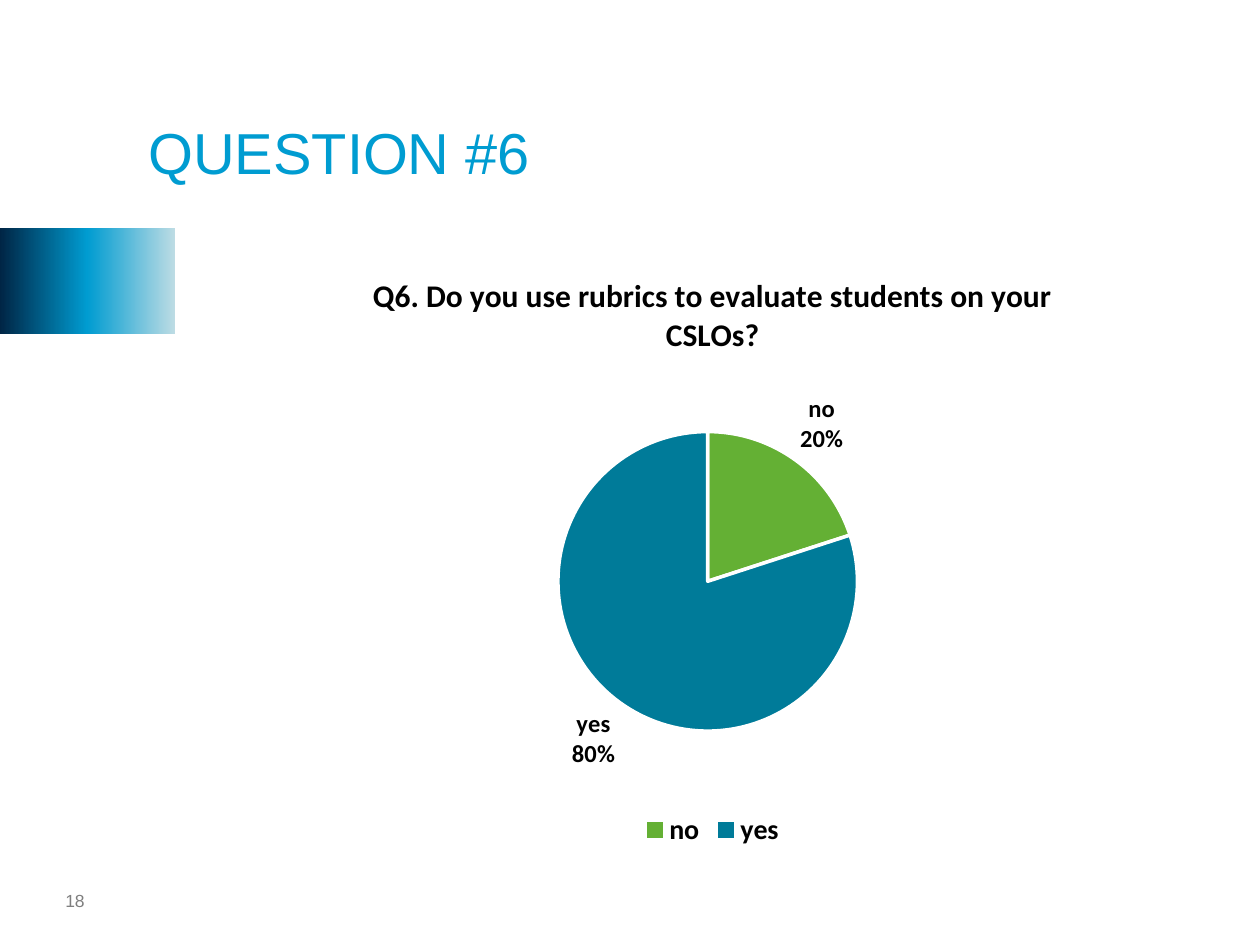
from lxml import etree
from pptx import Presentation
from pptx.chart.data import CategoryChartData
from pptx.dml.color import RGBColor
from pptx.enum.chart import XL_CHART_TYPE, XL_LABEL_POSITION, XL_LEGEND_POSITION
from pptx.enum.shapes import MSO_SHAPE
from pptx.enum.text import MSO_ANCHOR, PP_ALIGN
from pptx.oxml import parse_xml
from pptx.oxml.ns import nsdecls, qn
from pptx.util import Inches, Pt

PIE = XL_CHART_TYPE.PIE
OUTSIDE = XL_LABEL_POSITION.OUTSIDE_END
BOTTOM = XL_LEGEND_POSITION.BOTTOM
RECTANGLE = MSO_SHAPE.RECTANGLE
TOP, MIDDLE = MSO_ANCHOR.TOP, MSO_ANCHOR.MIDDLE
LEFT, CENTER = PP_ALIGN.LEFT, PP_ALIGN.CENTER

SLIDE_SIZE = (10, 7.5)
HEADING = "QUESTION #6"
PAGE_NUMBER = "18"
QUESTION = "Q6. Do you use rubrics to evaluate students on your CSLOs?"
ANSWERS = [("no", 20, "64B034"), ("yes", 80, "007B99")]
BAND_STOPS = [(0, "002545"), (50, "009CD1"), (100, "BDDCE4")]

HEADING_BOX = (1.08, 0.83, 3.26, 1.21)
PAGE_BOX = (0, 6.95, 1.19, 0.4)
BAND_BOX = (0, 1.81, 1.39, 0.84)
CHART_BOX = (1.82, 1.98, 7.67, 4.79)
PIE_SHARES = {"x": 0.34, "y": 0.3, "w": 0.31, "h": 0.5}


def color(hex_value):
    return RGBColor.from_string(hex_value)


def inches(box):
    return [Inches(length) for length in box]


def style(font, size, hex_value, name, bold=False):
    font.size, font.name, font.bold = Pt(size), name, bold
    font.color.rgb = color(hex_value)


def add_text(slide, text, box, size, hex_value, align, anchor, top_margin=0.05):
    frame = slide.shapes.add_textbox(*inches(box)).text_frame
    frame.word_wrap = True
    frame.vertical_anchor = anchor
    frame.margin_top = Inches(top_margin)
    frame.text = text
    paragraph = frame.paragraphs[0]
    paragraph.alignment = align
    style(paragraph.runs[0].font, size, hex_value, "Arial")


def add_band(slide):
    band = slide.shapes.add_shape(RECTANGLE, *inches(BAND_BOX))
    band.shadow.inherit = False
    band.line.fill.background()
    band.fill.gradient()
    band.fill.gradient_angle = 0
    stops = band._element.spPr.find(".//" + qn("a:gsLst"))
    for stop in list(stops):
        stops.remove(stop)
    for percent, hex_value in BAND_STOPS:
        stop = etree.SubElement(stops, qn("a:gs"), pos=str(percent * 1000))
        etree.SubElement(stop, qn("a:srgbClr"), val=hex_value)


def place_pie(chart):
    plot_area = chart._chartSpace.find(".//" + qn("c:plotArea"))
    for layout in plot_area.findall(qn("c:layout")):
        plot_area.remove(layout)
    shares = "".join(f'<c:{key} val="{share}"/>' for key, share in PIE_SHARES.items())
    plot_area.insert(0, parse_xml(
        f'<c:layout {nsdecls("c")}><c:manualLayout><c:layoutTarget val="inner"/>'
        f'<c:xMode val="edge"/><c:yMode val="edge"/>{shares}</c:manualLayout></c:layout>'))


def add_answers_chart(slide):
    answers = CategoryChartData()
    answers.categories = [answer for answer, _, _ in ANSWERS]
    answers.add_series("Series 1", [share for _, share, _ in ANSWERS])
    chart = slide.shapes.add_chart(PIE, *inches(CHART_BOX), answers).chart
    style(chart.font, 10, "000000", "Calibri")

    chart.has_title = True
    title = chart.chart_title.text_frame
    title.text = QUESTION
    style(title.paragraphs[0].runs[0].font, 18, "000000", "Calibri", True)
    chart.chart_title.include_in_layout = False

    chart.has_legend = True
    chart.legend.position = BOTTOM
    chart.legend.include_in_layout = False
    style(chart.legend.font, 16, "000000", "Calibri", True)

    plot = chart.plots[0]
    plot.vary_by_categories = True
    for index, (_, _, hex_value) in enumerate(ANSWERS):
        slice_format = plot.series[0].points[index].format
        slice_format.fill.solid()
        slice_format.fill.fore_color.rgb = color(hex_value)
        slice_format.line.color.rgb = color("FFFFFF")
        slice_format.line.width = Pt(2)

    labels = plot.series[0].data_labels
    labels.show_value = False
    labels.show_percentage = True
    labels.show_category_name = True
    labels.position = OUTSIDE
    style(labels.font, 14, "000000", "Calibri", True)
    separator = parse_xml(f'<c:separator {nsdecls("c")}>\n</c:separator>')
    labels._element.find(qn("c:showBubbleSize")).addnext(separator)
    place_pie(chart)


def main():
    """Build the survey question slide with its pie of answers."""
    deck = Presentation()
    deck.slide_width, deck.slide_height = inches(SLIDE_SIZE)
    slide = deck.slides.add_slide(deck.slide_layouts[6])
    add_band(slide)
    add_text(slide, HEADING, HEADING_BOX, 33, "009CD1", LEFT, TOP, 0.1)
    add_text(slide, PAGE_NUMBER, PAGE_BOX, 10, "7F7F7F", CENTER, MIDDLE)
    add_answers_chart(slide)
    deck.save("out.pptx")


if __name__ == "__main__":
    main()
